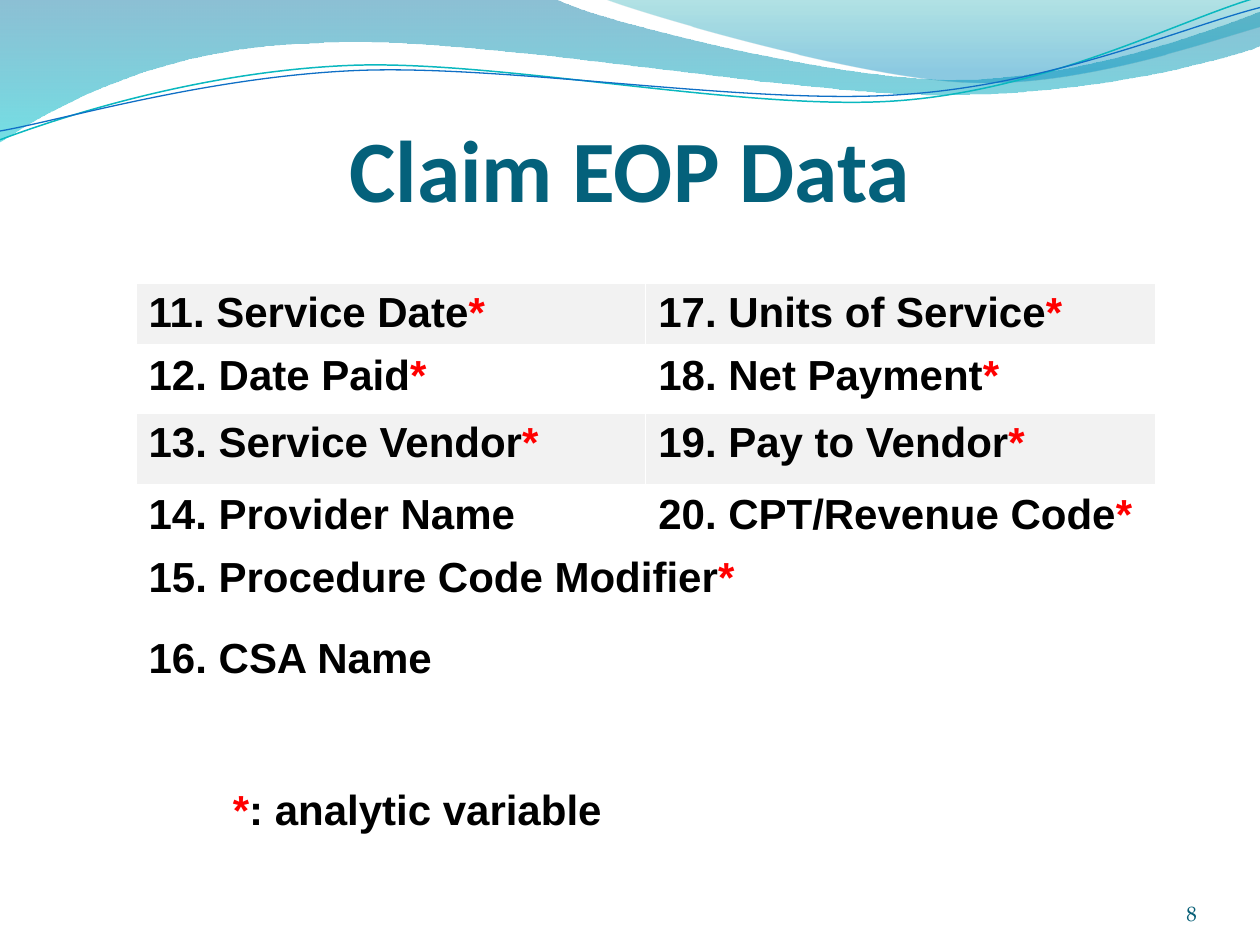
from lxml.etree import SubElement
from pptx import Presentation
from pptx.dml.color import RGBColor
from pptx.enum.text import MSO_ANCHOR, PP_ALIGN
from pptx.oxml.ns import qn
from pptx.util import Pt

PX = 9144
WHITE = RGBColor(0xFF, 0xFF, 0xFF)
BLACK = RGBColor(0, 0, 0)
RED = RGBColor(0xFF, 0, 0)
BAND = RGBColor(0xF2, 0xF2, 0xF2)
TITLE = RGBColor(0x04, 0x61, 0x7B)
NUMBER = RGBColor(0x04, 0x5D, 0x75)
BLUE = RGBColor(0x00, 0x74, 0xA1)
CYAN = RGBColor(0x00, 0xC6, 0xCF)
TEAL = RGBColor(0x00, 0xA1, 0xA9)
SKY = RGBColor(0x00, 0x8B, 0xBF)
GREEN_LINE = RGBColor(0x0A, 0xB8, 0xBF)
BLUE_LINE = RGBColor(0x0F, 0x6F, 0xC6)


def px(n):
    return n * PX


class Deck:
    font = "Arial"
    size = 24

    def __init__(self, prs):
        self.slide = prs.slides.add_slide(prs.slide_layouts[6])
        self.shapes = self.slide.shapes

    def run(self, p, text, color, size=None, font=None, bold=True):
        r = p.add_run()
        r.text = text
        r.font.size = Pt(size or self.size)
        r.font.name = font or self.font
        r.font.bold = bold
        r.font.color.rgb = color

    def freeform(self, start, segments, closed):
        points = [pt for seg in segments for pt in zip(seg[::2], seg[1::2])]
        builder = self.shapes.build_freeform(*start, scale=PX)
        builder.add_line_segments(points, close=closed)
        sp = builder.convert_to_shape()
        sp.shadow.inherit = False
        steps = iter(list(sp.element.iter(qn("a:lnTo"))))
        for seg in segments:
            first = next(steps)
            if len(seg) == 6:
                first.tag = qn("a:cubicBezTo")
                for _ in range(2):
                    step = next(steps)
                    first.append(step[0])
                    step.getparent().remove(step)
        return sp

    def wave(self, start, segments, stops):
        sp = self.freeform(start, segments, True)
        sp.line.fill.background()
        sp.fill.gradient()
        sp.fill.gradient_angle = 270
        for stop, (position, color, _) in zip(sp.fill.gradient_stops, stops):
            stop.position = position
            stop.color.rgb = color
        colors = sp.element.spPr.iter(qn("a:srgbClr"))
        for clr, (_, _, opacity) in zip(colors, stops):
            SubElement(clr, qn("a:alpha"), val=str(opacity * 1000))

    def curve(self, start, segments, color, width):
        sp = self.freeform(start, segments, False)
        sp.fill.background()
        sp.line.color.rgb = color
        sp.line.width = Pt(width)

    def text(self, box, runs, align=PP_ALIGN.LEFT, anchor=MSO_ANCHOR.TOP,
             margins=(10, 5, 10, 5), wrap=True, **style):
        tf = self.shapes.add_textbox(*map(px, box)).text_frame
        tf.word_wrap = wrap
        tf.vertical_anchor = anchor
        tf.margin_left, tf.margin_top, tf.margin_right, tf.margin_bottom = map(px, margins)
        p = tf.paragraphs[0]
        p.alignment = align
        for text, color in runs:
            self.run(p, text, color, **style)

    def border(self, cell, side, width):
        ln = SubElement(cell._tc.get_or_add_tcPr(), qn(f"a:{side}"), w=str(Pt(width)))
        fill = SubElement(ln, qn("a:solidFill"))
        SubElement(fill, qn("a:srgbClr"), val=str(WHITE))

    def table(self, box, heights, rows):
        tbl = self.shapes.add_table(len(rows), 2, *map(px, box)).table
        tbl.first_row = tbl.horz_banding = False
        for i, (height, row) in enumerate(zip(heights, rows)):
            tbl.rows[i].height = px(height)
            if len(row) == 1:
                tbl.cell(i, 0).merge(tbl.cell(i, 1))
            for j in range(2):
                cell = tbl.cell(i, j)
                for side in ("lnL", "lnR", "lnT", "lnB"):
                    self.border(cell, side, 3 if (i, side) == (0, "lnB") else 1)
                if i in (0, 2):
                    cell.fill.solid()
                    cell.fill.fore_color.rgb = BAND
                else:
                    cell.fill.background()
            for j, label in enumerate(row):
                p = tbl.cell(i, j).text_frame.paragraphs[0]
                self.run(p, label.rstrip("*"), BLACK)
                if label.endswith("*"):
                    self.run(p, "*", RED)


def main():
    prs = Presentation()
    prs.slide_width, prs.slide_height = px(1000), px(750)
    deck = Deck(prs)

    deck.wave((0, 0), [(440, -1), (476, 17, 664, 63, 758, 63),
                       (853, 63, 958, 26, 1000, 9), (1001, 36),
                       (983, 44, 870, 76, 746, 75), (622, 75, 382, 28, 257, 34),
                       (129, 36, 46, 83, -1, 113)],
              [(0, BLUE, 45), (1, CYAN, 55)])
    deck.wave((479, -1), [(509, 11, 682, 62, 769, 65),
                          (856, 69, 961, 32, 1000, 21), (1000, 0)],
              [(0, TEAL, 30), (0.8, SKY, 45)])
    deck.curve((0, 111), [(48, 93, 158, 57, 277, 52), (395, 47, 593, 89, 713, 80),
                          (833, 71, 938, 15, 998, -2)], GREEN_LINE, 0.85)
    deck.curve((0, 104), [(47, 96, 164, 61, 283, 56), (403, 51, 597, 84, 717, 75),
                          (836, 67, 941, 21, 1000, 6)], BLUE_LINE, 0.75)

    deck.text((50, 77, 900, 98), [("Claim EOP Data", TITLE)], PP_ALIGN.CENTER,
              MSO_ANCHOR.BOTTOM, (0, 5, 0, 0), size=50, font="Calibri")
    deck.text((867, 695, 83, 40), [("8", NUMBER)], PP_ALIGN.RIGHT,
              MSO_ANCHOR.BOTTOM, (0, 0, 0, 0), size=12, font="TeX Gyre Pagella", bold=False)
    deck.table((108, 225, 809, 337), (50, 53, 57, 50, 64, 63), [
        ("11. Service Date*", "17. Units of Service*"),
        ("12. Date Paid*", "18. Net Payment*"),
        ("13. Service Vendor*", "19. Pay to Vendor*"),
        ("14. Provider Name", "20. CPT/Revenue Code*"),
        ("15. Procedure Code Modifier*",),
        ("16. CSA Name",),
    ])
    deck.text((175, 617, 316, 50), [("*", RED), (": analytic variable", BLACK)], wrap=False)
    prs.save("out.pptx")


if __name__ == "__main__":
    main()
